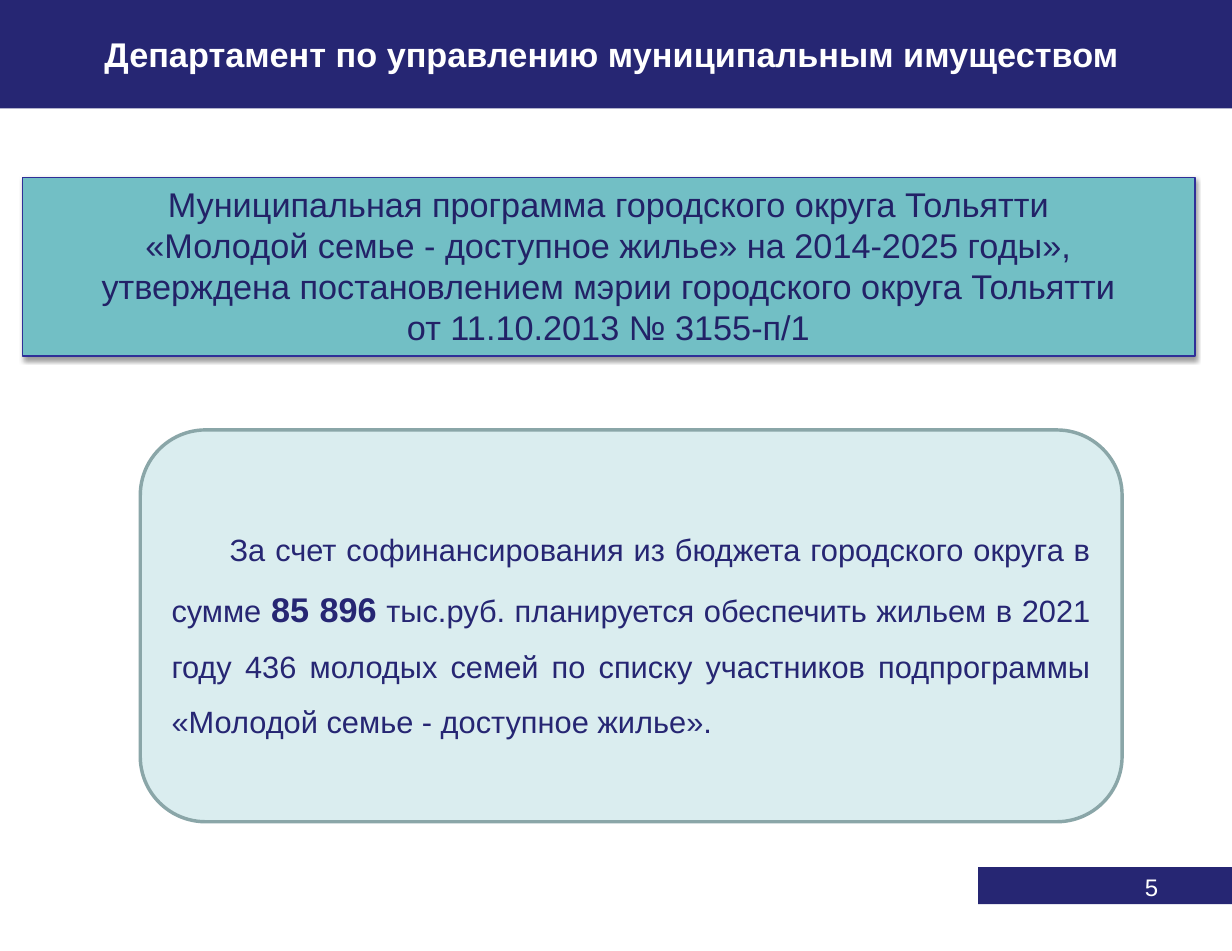
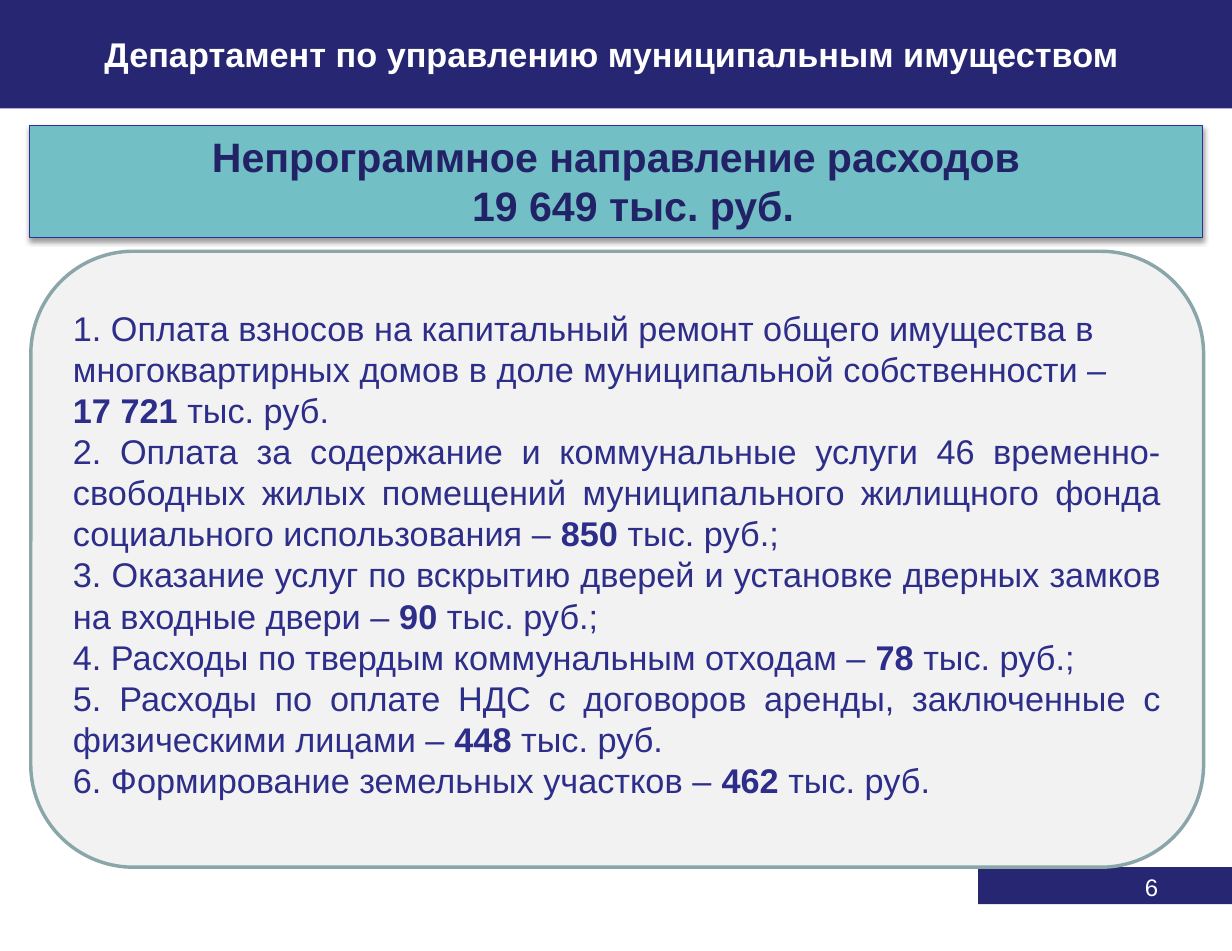
import pptx
import pptx.util
import pptx.dml.color
import pptx.enum.shapes
import pptx.enum.text
import pptx.oxml
import pptx.oxml.ns

Pt = pptx.util.Pt
RGB = pptx.dml.color.RGBColor
SHAPE = pptx.enum.shapes.MSO_SHAPE
ALIGN = pptx.enum.text.PP_ALIGN
ANCHOR = pptx.enum.text.MSO_ANCHOR

NAVY = RGB(0x26, 0x26, 0x73)
HEADING = RGB(0x22, 0x22, 0x67)
LIST_TEXT = RGB(0x2D, 0x2D, 0x8A)
TEAL = RGB(0x72, 0xBF, 0xC5)
TEAL_EDGE = RGB(0x2F, 0x2F, 0x98)
PALE_TEAL = RGB(0xDA, 0xED, 0xEF)
PALE_GREY = RGB(0xF2, 0xF2, 0xF2)
PANEL_EDGE = RGB(0x8A, 0xA6, 0xA8)
WHITE = RGB(0xFF, 0xFF, 0xFF)

WIDTH, HEIGHT = 720, 555.84
FONT = "Arial"
DEPARTMENT = "Департамент по управлению муниципальным имуществом"
SHADOW = (
    f'<a:outerShdw {pptx.oxml.ns.nsdecls("a")} blurRad="{Pt(3.1)}" dist="{Pt(1.6)}" '
    'dir="5400000" rotWithShape="0"><a:srgbClr val="000000">'
    '<a:alpha val="38000"/></a:srgbClr></a:outerShdw>'
)


class Deck:
    def __init__(self):
        self.prs = pptx.Presentation()
        self.prs.slide_width, self.prs.slide_height = Pt(WIDTH), Pt(HEIGHT)
        self.s = None

    def slide(self, number):
        self.s = self.prs.slides.add_slide(self.prs.slide_layouts[5])
        self.title(DEPARTMENT)
        self.shape(SHAPE.RECTANGLE, (571.7, 506.9, 148.3, 21.6), NAVY)
        self.page_number(number)

    def font(self, item, size, color, bold=False):
        item.font.size, item.font.bold, item.font.name = Pt(size), bold, FONT
        item.font.color.rgb = color

    def title(self, text):
        sp = self.s.shapes.title
        sp.left, sp.top, sp.width, sp.height = 0, 0, Pt(WIDTH), Pt(63.4)
        sp.fill.solid()
        sp.fill.fore_color.rgb = NAVY
        tf = sp.text_frame
        tf.text = text
        tf.auto_size = pptx.enum.text.MSO_AUTO_SIZE.NONE
        tf.vertical_anchor = ANCHOR.MIDDLE
        tf.margin_left, tf.margin_right = Pt(14), Pt(19)
        tf.margin_top, tf.margin_bottom = Pt(8), Pt(4)
        p = tf.paragraphs[0]
        p.alignment, p.line_spacing = ALIGN.CENTER, 0.8
        self.font(p.runs[0], 20, WHITE, bold=True)

    def page_number(self, number):
        tf = self.s.shapes.add_textbox(*map(Pt, (516.2, 506.2, 167.8, 38.9))).text_frame
        tf.word_wrap = True
        tf.text = str(number)
        p = tf.paragraphs[0]
        p.alignment = ALIGN.RIGHT
        self.font(p.runs[0], 14, WHITE)

    def shape(self, kind, box, fill, edge=None, weight=0):
        sp = self.s.shapes.add_shape(kind, *map(Pt, box))
        sp.fill.solid()
        sp.fill.fore_color.rgb = fill
        if edge is None:
            sp.line.fill.background()
        else:
            sp.line.color.rgb, sp.line.width = edge, Pt(weight)
        sp.shadow.inherit = False
        sp.text_frame.word_wrap = True
        return sp

    def heading(self, lines, box, size, bold=False):
        sp = self.shape(SHAPE.RECTANGLE, box, TEAL, TEAL_EDGE, 0.75)
        effects = sp.element.spPr.find(pptx.oxml.ns.qn("a:effectLst"))
        effects.append(pptx.oxml.parse_xml(SHADOW))
        tf = sp.text_frame
        tf.vertical_anchor = ANCHOR.TOP
        tf.text = "\n".join(lines)
        for p in tf.paragraphs:
            p.alignment = ALIGN.CENTER
            self.font(p.runs[0], size, HEADING, bold)
        return tf

    def panel(self, texts, box, fill, size, color, bold_size):
        sp = self.shape(SHAPE.ROUNDED_RECTANGLE, box, fill, PANEL_EDGE, 2)
        tf = sp.text_frame
        tf.vertical_anchor = ANCHOR.MIDDLE
        for i, text in enumerate(texts):
            p = tf.paragraphs[0] if i == 0 else tf.add_paragraph()
            p.alignment = ALIGN.JUSTIFY
            for j, part in enumerate(text.split("*")):
                bold = j % 2 == 1
                r = p.add_run()
                r.text = part.rstrip("\n")
                self.font(r, bold_size if bold else size, color, bold)
                if part.endswith("\n"):
                    p.add_line_break()
        return tf


def programme_slide(deck):
    deck.slide(5)
    deck.heading([
        "Муниципальная программа городского округа Тольятти",
        "«Молодой семье - доступное жилье» на 2014-2025 годы»,",
        "утверждена постановлением мэрии городского округа Тольятти",
        "от 11.10.2013 № 3155-п/1",
    ], (13, 103.7, 685.4, 104.4), 20)
    tf = deck.panel([
        "За счет софинансирования из бюджета городского округа в сумме *85 896* тыс.руб. "
        "планируется обеспечить жильем в 2021 году 436 молодых семей по списку участников "
        "подпрограммы «Молодой семье - доступное жилье».",
    ], (82, 251.3, 573.8, 229), PALE_TEAL, 18, NAVY, 20)
    p = tf.paragraphs[0]
    p.line_spacing = 1.5
    p._p.get_or_add_pPr().set("indent", str(Pt(34)))


def other_spending_slide(deck):
    deck.slide(6)
    tf = deck.heading(["Непрограммное направление расходов", "19 649 тыс. руб."],
                      (17.3, 73.4, 685.4, 65.5), 24, bold=True)
    tf.paragraphs[1]._p.get_or_add_pPr().set("marL", str(Pt(20)))
    tf = deck.panel([
        "1. Оплата взносов на капитальный ремонт общего имущества в многоквартирных домов "
        "в доле муниципальной собственности –\n*17 721* тыс. руб.",
        "2. Оплата за содержание и коммунальные услуги 46 временно-свободных жилых помещений "
        "муниципального жилищного фонда социального использования – *850* тыс. руб.;",
        "3. Оказание услуг по вскрытию дверей и установке дверных замков на входные двери – "
        "*90* тыс. руб.;",
        "4. Расходы по твердым коммунальным отходам – *78* тыс. руб.;",
        "5. Расходы по оплате НДС с договоров аренды, заключенные с физическими лицами – "
        "*448* тыс. руб.",
        "6. Формирование земельных участков – *462* тыс. руб.",
    ], (18, 146.9, 685.4, 360), PALE_GREY, 20, LIST_TEXT, 20)
    tf.margin_bottom = Pt(10)
    tf.paragraphs[0].alignment = ALIGN.LEFT


def main():
    deck = Deck()
    programme_slide(deck)
    other_spending_slide(deck)
    deck.prs.save("out.pptx")


if __name__ == "__main__":
    main()
